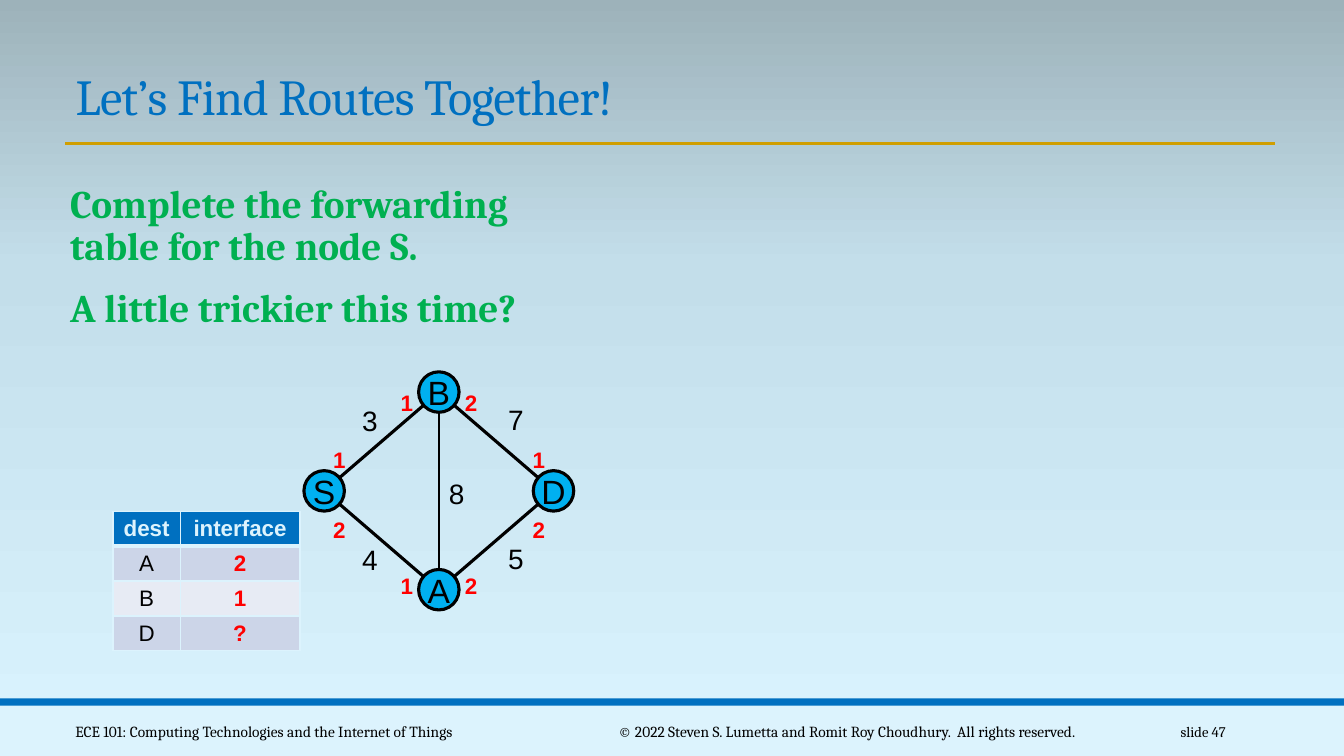
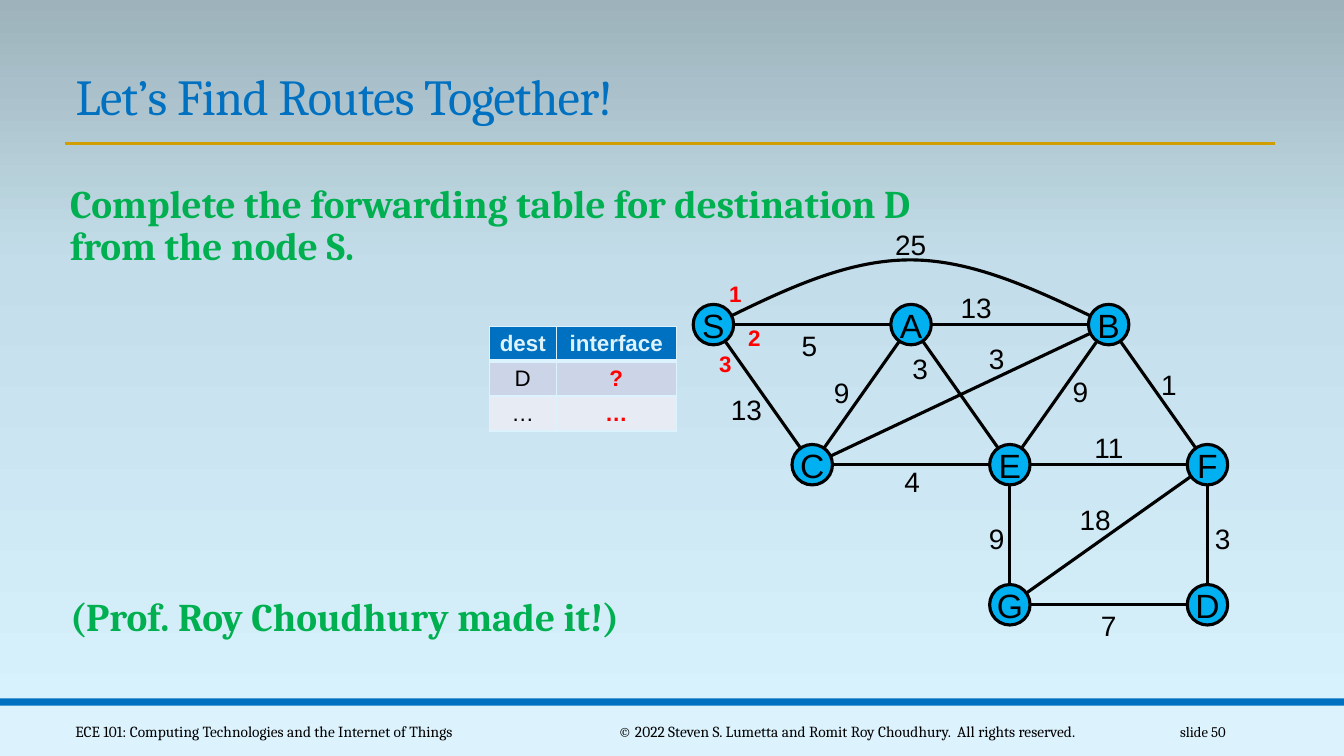
from copy import deepcopy

from lxml import etree
from pptx import Presentation
from pptx.dml.color import RGBColor
from pptx.enum.shapes import MSO_CONNECTOR, MSO_SHAPE
from pptx.enum.text import MSO_ANCHOR, PP_ALIGN
from pptx.oxml.ns import qn
from pptx.util import Cm, Pt

LEFT, CENTER, RIGHT = PP_ALIGN.LEFT, PP_ALIGN.CENTER, PP_ALIGN.RIGHT
TOP, MIDDLE, BOTTOM = MSO_ANCHOR.TOP, MSO_ANCHOR.MIDDLE, MSO_ANCHOR.BOTTOM
STRAIGHT = MSO_CONNECTOR.STRAIGHT
RECTANGLE, OVAL = MSO_SHAPE.RECTANGLE, MSO_SHAPE.OVAL

SERIF, SANS = "Cambria", "Arial"
COLORS = {
    "black": "000000", "red": "FF0000", "green": "00B050", "blue": "0070C0",
    "gold": "D09E00", "pale": "DCF3FD", "node": "00B0F0",
    "row_dark": "CCD5E8", "row_light": "E7EBF4",
    "sky_bottom": "DAF4FF", "sky_middle": "C3DEEA", "sky_top": "9DB2BA",
}
RGB = {name: RGBColor.from_string(value) for name, value in COLORS.items()}

PAGE_WIDTH, PAGE_HEIGHT = 33.87, 19.05
NODE_SIZE = 1.02
LABEL_WIDTH, LABEL_HEIGHT = 1.3, 1.1
COLUMN_WIDTHS = (1.69, 3.02)
ROW_HEIGHT = 0.88

# Nodes are (column, row) on a grid; labels are (text, centre x, centre y) in cm.
SLIDES = [
    {
        "number": "slide 47",
        "body": [(4.52, [["Complete the forwarding", "table for the node S."],
                         ["A little trickier this time?"]])],
        "table_at": (2.85, 12.88),
        "rows": [("A", "2"), ("B", "1"), ("D", "?")],
        "origin": (8.17, 9.88), "step": (2.89, 2.49),
        "nodes": {"S": (0, 1), "D": (2, 1), "A": (1, 2), "B": (1, 0)},
        "edges": ["SB", "DB", "SA", "DA"],
        "thin_edges": ["AB"],
        "curve": [],
        "weights": [("7", 13, 10.57), ("3", 9.32, 10.6), ("5", 13, 14.07),
                    ("4", 9.32, 14.1), ("8", 11.51, 12.42)],
        "interfaces": [("1", 8.55, 11.57), ("1", 13.58, 11.57),
                       ("1", 10.25, 10.15), ("2", 11.87, 10.15),
                       ("2", 8.55, 13.35), ("2", 13.58, 13.35),
                       ("1", 10.25, 14.75), ("2", 11.87, 14.75)],
    },
    {
        "number": "slide 50",
        "body": [(4.52, [["Complete the forwarding table for destination D from the node S."]]),
                 (14.94, [["(Prof. Roy Choudhury made it!)"]])],
        "table_at": (12.33, 8.22),
        "rows": [("D", "?"), ("…", "…")],
        "origin": (17.98, 8.18), "step": (2.49, 3.53),
        "nodes": {"S": (0, 0), "A": (2, 0), "B": (4, 0), "C": (1, 1),
                  "E": (3, 1), "F": (5, 1), "G": (3, 2), "D": (5, 2)},
        "edges": ["SA", "AB", "SC", "AC", "AE", "BC", "BE", "BF",
                  "CE", "EF", "EG", "FG", "FD", "GD"],
        "thin_edges": [],
        # Start point, then two control points and an end point for each arc
        "curve": [(17.98, 8.18), (19.63, 7.37), (21.26, 6.55), (22.94, 6.55),
                  (24.6, 6.55), (26.25, 7.37), (27.94, 8.18)],
        "weights": [("25", 22.95, 6.15), ("5", 20.4, 8.69), ("13", 24.6, 7.75),
                    ("13", 18.81, 10.31), ("4", 22.99, 12.12),
                    ("11", 27.95, 11.28), ("18", 27.6, 13.08),
                    ("7", 27.94, 15.75), ("3", 30.81, 13.56),
                    ("3", 25.12, 9.02), ("3", 23.19, 9.27), ("9", 21.21, 9.88),
                    ("9", 27.23, 9.86), ("1", 29.46, 9.68), ("9", 25.12, 13.56)],
        "interfaces": [("1", 18.53, 7.4), ("2", 19.01, 8.5), ("3", 18.28, 9.16)],
    },
]


def add_run(paragraph, text, size, color, font=SANS, bold=False, align=CENTER):
    paragraph.alignment = align
    run = paragraph.add_run()
    run.text = text
    run.font.name = font
    run.font.size = Pt(size)
    run.font.bold = bold
    run.font.color.rgb = RGB[color]
    return run


def add_line(slide, start, end, color="black", width=2.25):
    line = slide.shapes.add_connector(
        STRAIGHT, Cm(start[0]), Cm(start[1]), Cm(end[0]), Cm(end[1]))
    line.line.color.rgb = RGB[color]
    line.line.width = Pt(width)
    etree.SubElement(line.element.spPr, qn("a:effectLst"))
    return line


presentation = Presentation()
presentation.slide_width = Cm(PAGE_WIDTH)
presentation.slide_height = Cm(PAGE_HEIGHT)
layout = presentation.slide_layouts[5]
slides = [presentation.slides.add_slide(layout) for _ in SLIDES]

# Shared background, running from bottom to top
background = layout.background.fill
background.gradient()
background.gradient_angle = 90
stop_list = layout.element.find(".//" + qn("a:gsLst"))
stop_list.insert(1, deepcopy(stop_list[0]))
for stop, (position, color) in zip(
        background.gradient_stops,
        [(0, "sky_bottom"), (0.65, "sky_middle"), (1, "sky_top")]):
    stop.position = position
    stop.color.rgb = RGB[color]

# Shared bands, title rule and footers: drawn on a slide, then moved to the layout
shared = []
for top, height, color in [(17.78, 1.27, "pale"), (17.6, 0.18, "blue")]:
    band = slides[0].shapes.add_shape(
        RECTANGLE, 0, Cm(top), Cm(PAGE_WIDTH), Cm(height))
    band.shadow.inherit = False
    band.fill.solid()
    band.fill.fore_color.rgb = RGB[color]
    band.line.fill.background()
    shared.append(band)
shared.append(add_line(slides[0], (1.65, 3.61), (32.13, 3.61), "gold"))
for text, left, width, align in [
        ("ECE 101: Computing Technologies and the Internet of Things", 1.65, 11.63, LEFT),
        ("© 2022 Steven S. Lumetta and Romit Roy Choudhury.  All rights reserved.",
         13.87, 14.96, CENTER)]:
    footer = slides[0].shapes.add_textbox(Cm(left), Cm(17.93), Cm(width), Cm(1.02))
    footer.text_frame.word_wrap = True
    footer.text_frame.vertical_anchor = MIDDLE
    add_run(footer.text_frame.paragraphs[0], text, 11, "black", SERIF, align=align)
    shared.append(footer)
for shape in shared:
    layout.shapes.element.append(shape.element)

for slide, content in zip(slides, SLIDES):
    title = slide.shapes.title
    title.left, title.top, title.width, title.height = Cm(1.65), Cm(1.5), Cm(30.5), Cm(1.8)
    title.text_frame.vertical_anchor = BOTTOM
    paragraph = title.text_frame.paragraphs[0]
    paragraph.line_spacing = 0.85
    run = add_run(paragraph, "Let’s Find Routes Together!", 36, "blue", SERIF, align=LEFT)
    run.font._element.set("spc", "-50")

    number = slide.shapes.add_textbox(Cm(27.51), Cm(17.93), Cm(3.63), Cm(1.02))
    number.text_frame.vertical_anchor = MIDDLE
    number.text_frame.word_wrap = True
    add_run(number.text_frame.paragraphs[0], content["number"], 10.5, "black",
            SERIF, align=RIGHT)

    for top, paragraphs in content["body"]:
        body = slide.shapes.add_textbox(Cm(1.52), Cm(top), Cm(21.64), Cm(2.2)).text_frame
        body.word_wrap = True
        body.margin_left, body.margin_right = Cm(0.25), 0
        for index, lines in enumerate(paragraphs):
            paragraph = body.add_paragraph() if index else body.paragraphs[0]
            paragraph.line_spacing = 0.9
            paragraph.space_before = Pt(14 if index else 0)
            for line_index, line in enumerate(lines):
                if line_index:
                    paragraph.add_line_break()
                add_run(paragraph, line, 28, "green", SERIF, True, LEFT)

    # Forwarding table
    rows = [("dest", "interface")] + content["rows"]
    left, top = content["table_at"]
    table = slide.shapes.add_table(
        len(rows), 2, Cm(left), Cm(top), Cm(sum(COLUMN_WIDTHS)),
        Cm(ROW_HEIGHT * len(rows))).table
    table.horz_banding = False
    for column, width in zip(table.columns, COLUMN_WIDTHS):
        column.width = Cm(width)
    for row_index, row in enumerate(rows):
        table.rows[row_index].height = Cm(ROW_HEIGHT)
        header = row_index == 0
        fill = "blue" if header else "row_dark" if row_index % 2 else "row_light"
        for column_index, text in enumerate(row):
            cell = table.cell(row_index, column_index)
            cell.vertical_anchor = MIDDLE
            cell.margin_left = cell.margin_right = Cm(0.1)
            cell.margin_top = cell.margin_bottom = Cm(0.1)
            for side in ("lnL", "lnR", "lnT", "lnB"):
                thick = (header and side == "lnB") or (row_index == 1 and side == "lnT")
                border = etree.SubElement(
                    cell._tc.get_or_add_tcPr(), qn("a:" + side),
                    w=str(Pt(3 if thick else 1)))
                solid = etree.SubElement(border, qn("a:solidFill"))
                etree.SubElement(solid, qn("a:srgbClr"), val=COLORS["pale"])
            cell.fill.solid()
            cell.fill.fore_color.rgb = RGB[fill]
            color = "pale" if header else "red" if column_index else "black"
            add_run(cell.text_frame.paragraphs[0], text, 16, color,
                    bold=header or column_index == 1)

    # Network graph: edges first, so that the nodes cover their ends
    centers = {
        name: tuple(start + step * place for start, step, place
                    in zip(content["origin"], content["step"], places))
        for name, places in content["nodes"].items()
    }
    for edges, width in [(content["edges"], 2.25), (content["thin_edges"], 1.5)]:
        for start, end in edges:
            add_line(slide, centers[start], centers[end], width=width)

    if content["curve"]:
        points = [(Cm(x), Cm(y)) for x, y in content["curve"]]
        builder = slide.shapes.build_freeform(*points[0])
        builder.add_line_segments(points[1:], close=False)
        curve = builder.convert_to_shape()
        curve.shadow.inherit = False
        curve.fill.background()
        curve.line.color.rgb = RGB["black"]
        curve.line.width = Pt(2.25)
        outline = curve.element.find(".//" + qn("a:path"))
        segments = outline.findall(qn("a:lnTo"))
        for first in range(0, len(segments), 3):
            arc = etree.SubElement(outline, qn("a:cubicBezTo"))
            for segment in segments[first:first + 3]:
                arc.append(segment[0])
                outline.remove(segment)

    for name, (x, y) in centers.items():
        node = slide.shapes.add_shape(
            OVAL, Cm(x - NODE_SIZE / 2), Cm(y - NODE_SIZE / 2), Cm(NODE_SIZE), Cm(NODE_SIZE))
        node.shadow.inherit = False
        node.fill.solid()
        node.fill.fore_color.rgb = RGB["node"]
        node.line.color.rgb = RGB["black"]
        node.line.width = Pt(2.25)
        frame = node.text_frame
        frame.margin_left = frame.margin_right = frame.margin_top = frame.margin_bottom = 0
        frame.vertical_anchor = MIDDLE
        frame.word_wrap = False
        add_run(frame.paragraphs[0], name, 24, "black")

    for labels, size, color, bold in [(content["weights"], 20, "black", False),
                                      (content["interfaces"], 16, "red", True)]:
        for text, x, y in labels:
            label = slide.shapes.add_textbox(
                Cm(x - LABEL_WIDTH / 2), Cm(y - LABEL_HEIGHT / 2),
                Cm(LABEL_WIDTH), Cm(LABEL_HEIGHT))
            label.text_frame.word_wrap = False
            label.text_frame.vertical_anchor = MIDDLE
            add_run(label.text_frame.paragraphs[0], text, size, color, bold=bold)

presentation.save("out.pptx")
